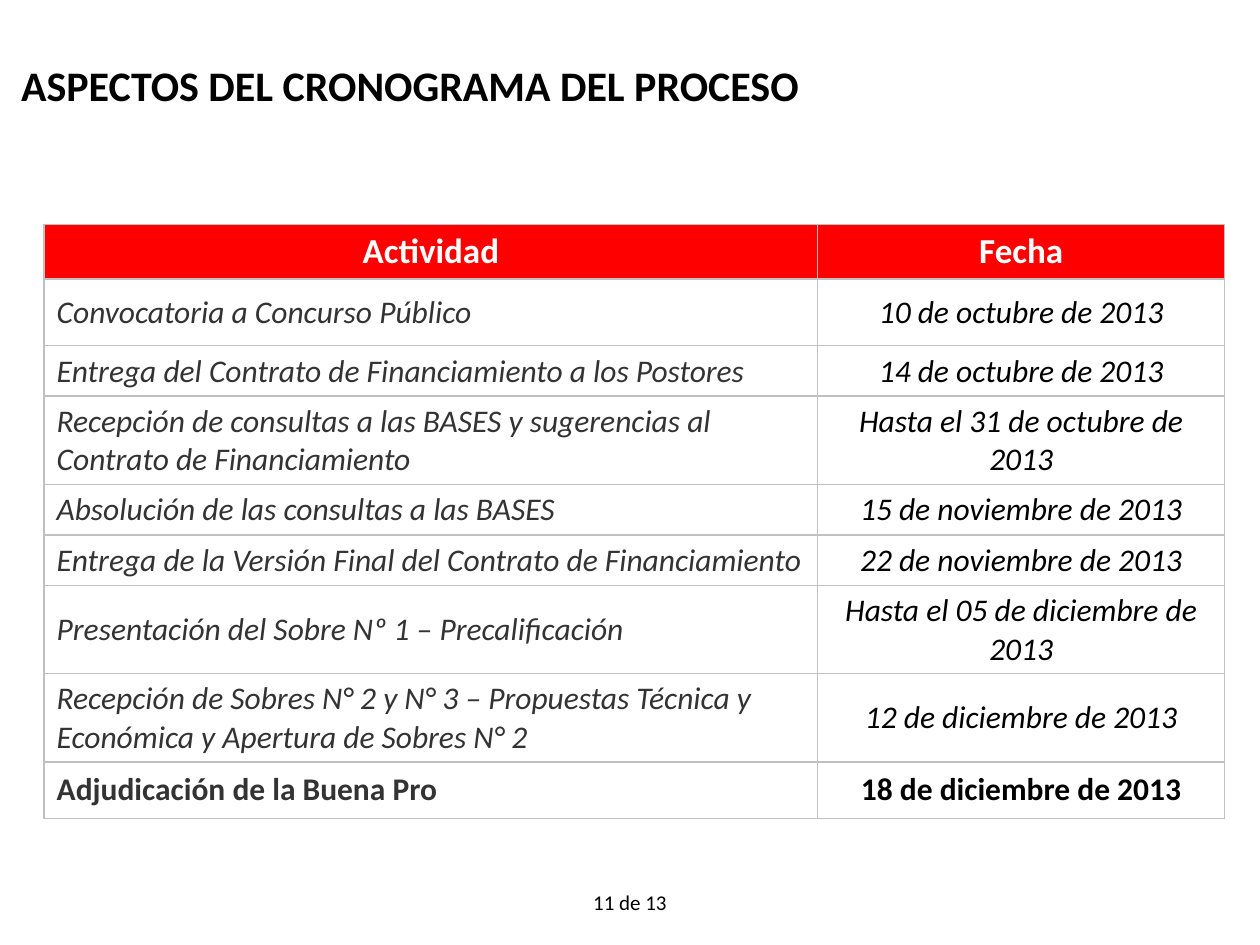
"""Build the slide with the schedule of the tender process."""
from dataclasses import dataclass

from lxml.etree import SubElement
from pptx import Presentation
from pptx.dml.color import RGBColor
from pptx.enum.text import MSO_ANCHOR as Anchor, PP_ALIGN as Align
from pptx.oxml.ns import qn
from pptx.util import Inches, Pt


@dataclass(frozen=True)
class Theme:
    """Colours, type sizes and the grid."""
    font: str = "Calibri"
    ink: str = "000000"
    activity: str = "333333"
    paper: str = "FFFFFF"
    accent: str = "FF0000"
    border: str = "C0C0C0"
    title: int = 24
    header: int = 20
    body: int = 18
    footer: int = 12
    columns: int = 100
    rows: int = 75


class SlideBuilder:
    """Place styled elements on a slide by grid columns and rows."""

    def __init__(self, deck, theme):
        """Add a blank slide and measure its grid."""
        self.theme = theme
        self.slide = deck.slides.add_slide(deck.slide_layouts[6])
        self.column = deck.slide_width / theme.columns
        self.row = deck.slide_height / theme.rows

    def across(self, columns):
        """Turn grid columns into a length."""
        return round(columns * self.column)

    def down(self, rows):
        """Turn grid rows into a length."""
        return round(rows * self.row)

    def place(self, left, top, width, height):
        """Turn a grid box into lengths."""
        return self.across(left), self.down(top), self.across(width), self.down(height)

    def style_words(self, frame, words, size, color, align=Align.LEFT, bold=False, italic=False):
        """Set the words of a text frame and format them."""
        frame.text = words
        paragraph = frame.paragraphs[0]
        paragraph.alignment = align
        font = paragraph.runs[0].font
        font.name, font.size = self.theme.font, Pt(size)
        font.bold, font.italic = bold, italic
        font.color.rgb = RGBColor.from_string(color)

    def text(self, box, words, size, anchor=Anchor.TOP, **style):
        """Add a text box."""
        frame = self.slide.shapes.add_textbox(*self.place(*box)).text_frame
        frame.word_wrap = True
        frame.vertical_anchor = anchor
        self.style_words(frame, words, size, self.theme.ink, **style)

    def outline(self, cell):
        """Draw the four borders of a cell."""
        properties = cell._tc.get_or_add_tcPr()
        for position, side in enumerate(("lnL", "lnR", "lnT", "lnB")):
            line = properties.makeelement(qn(f"a:{side}"), {"w": str(Pt(1))})
            fill = SubElement(line, qn("a:solidFill"))
            SubElement(fill, qn("a:srgbClr"), val=self.theme.border)
            properties.insert(position, line)

    def cell(self, cell, words, size, color, fill, anchor=Anchor.MIDDLE, **style):
        """Fill, outline and letter one table cell."""
        cell.fill.solid()
        cell.fill.fore_color.rgb = RGBColor.from_string(fill)
        cell.vertical_anchor = anchor
        self.style_words(cell.text_frame, words, size, color, **style)
        self.outline(cell)

    def schedule(self, box, widths, heights, headings, entries):
        """Add the table of activities and dates, its last entry in bold."""
        theme = self.theme
        frame = self.slide.shapes.add_table(len(heights), len(widths), *self.place(*box))
        table = frame.table
        for column, width in zip(table.columns, widths):
            column.width = self.across(width)
        for row, height in zip(table.rows, heights):
            row.height = self.down(height)
        frame.height = self.down(box[3])

        for index, heading in enumerate(headings):
            cell = table.cell(0, index)
            self.cell(cell, heading, theme.header, theme.paper, theme.accent,
                      Anchor.BOTTOM, align=Align.CENTER, bold=True)
            indent = cell.text_frame.paragraphs[0]._p.get_or_add_pPr()
            indent.set("marL", str(Inches(0.38)))
            indent.set("indent", str(-Inches(0.38)))

        looks = ((theme.activity, Align.LEFT), (theme.ink, Align.CENTER))
        for number, entry in enumerate(entries, 1):
            final = number == len(entries)
            for index, (words, (color, align)) in enumerate(zip(entry, looks)):
                self.cell(table.cell(number, index), words, theme.body, color, theme.paper,
                          align=align, bold=final, italic=not final)


HEADINGS = ("Actividad", "Fecha")
ENTRIES = (
    ("Convocatoria a Concurso Público", "10 de octubre de 2013"),
    ("Entrega del Contrato de Financiamiento a los Postores", "14 de octubre de 2013"),
    ("Recepción de consultas a las BASES y sugerencias al Contrato de Financiamiento",
     "Hasta el 31 de octubre de 2013"),
    ("Absolución de las consultas a las BASES", "15 de noviembre de 2013"),
    ("Entrega de la Versión Final del Contrato de Financiamiento", "22 de noviembre de 2013"),
    ("Presentación del Sobre Nº 1 – Precalificación", "Hasta el 05 de diciembre de 2013"),
    ("Recepción de Sobres N° 2 y N° 3 – Propuestas Técnica y Económica y Apertura de Sobres N° 2",
     "12 de diciembre de 2013"),
    ("Adjudicación de la Buena Pro", "18 de diciembre de 2013"),
)


def main():
    """Build and save the deck."""
    deck = Presentation()
    deck.slide_width, deck.slide_height = Inches(10), Inches(7.5)
    theme = Theme()
    page = SlideBuilder(deck, theme)
    page.text((0.7, 3.6, 64.3, 6.2), "ASPECTOS DEL CRONOGRAMA DEL PROCESO", theme.title,
              Anchor.MIDDLE, bold=True)
    page.text((45.7, 70.1, 8.6, 3.9), "11 de 13", theme.footer, align=Align.CENTER)
    page.schedule((3.5, 17.8, 93.7, 47.2), (61.4, 32.3),
                  (3.3, 5.3, 3, 5.3, 3, 3, 5.3, 5.3, 4.5), HEADINGS, ENTRIES)
    deck.save("out.pptx")


if __name__ == "__main__":
    main()
